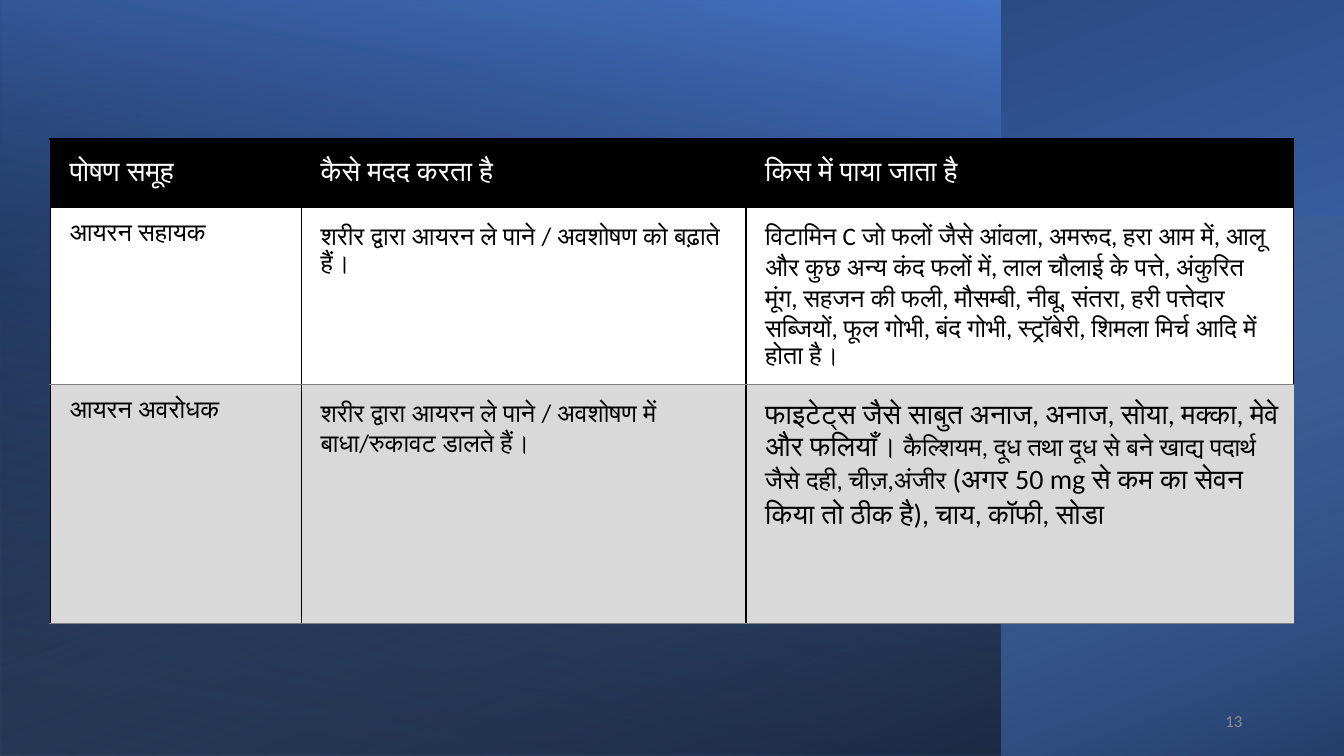
import pptx
import pptx.util
import pptx.dml.color
import pptx.enum.shapes
import pptx.enum.text
import pptx.oxml
import pptx.oxml.ns

Inches, Pt = pptx.util.Inches, pptx.util.Pt
RGB = pptx.dml.color.RGBColor
ANCHOR = pptx.enum.text.MSO_ANCHOR
BLACK = RGB(0, 0, 0)
WHITE = RGB(0xFF, 0xFF, 0xFF)
BLUE = RGB(0x44, 0x72, 0xC4)
NAVY = RGB(0x20, 0x38, 0x64)
SKY = RGB(0x9D, 0xC3, 0xE6)
PALE = RGB(0xD9, 0xD9, 0xD9)
GREY = RGB(0x80, 0x80, 0x80)
MUTED = RGB(0x8C, 0x8C, 0x8C)
WIDE, HIGH = 13.33, 7.5
FONT = "Calibri"

COLS = [2.49, 4.41, 5.43]
ROWS = [0.68, 1.69, 2.37]
FILLS = [BLACK, WHITE, PALE]
# Each cell is a list of (text, size) runs.
CELLS = [
    [[("पोषण समूह", 20)], [("कैसे मदद करता है", 20)], [("किस में पाया जाता है", 20)]],
    [[("आयरन सहायक", 18)],
     [("शरीर द्वारा आयरन ले पाने / अवशोषण को बढ़ाते हैं।", 18)],
     [("विटामिन C जो फलों जैसे आंवला, अमरूद, हरा आम में, आलू और कुछ अन्य कंद "
       "फलों में, लाल चौलाई के पत्ते, अंकुरित मूंग, सहजन की फली, मौसम्बी, नीबू, "
       "संतरा, हरी पत्तेदार सब्जियों, फूल गोभी, बंद गोभी, स्ट्रॉबेरी, शिमला "
       "मिर्च आदि में होता है।", 18)]],
    [[("आयरन अवरोधक", 18)],
     [("शरीर द्वारा आयरन ले पाने / अवशोषण में बाधा/रुकावट डालते हैं।", 18)],
     [("फाइटेट्स जैसे साबुत अनाज, अनाज, सोया, मक्का, मेवे और फलियाँ। ", 20),
      ("कैल्शियम, दूध तथा दूध से बने खाद्य पदार्थ जैसे दही, चीज़,अंजीर ", 18),
      ("(अगर 50 mg से कम का सेवन किया तो ठीक है), चाय, कॉफी, सोडा", 20)]],
]


def node(xml):
    return pptx.oxml.parse_xml(xml.replace(">", f" {pptx.oxml.ns.nsdecls('a')}>", 1))


def write(para, text, size, color):
    run = para.add_run()
    run.text = text
    run.font.size = Pt(size)
    run.font.name = FONT
    run.font.color.rgb = color


def wash(slide, box, turn, angle, stops):
    """Add a mirrored gradient panel; stops are (place, colour, opacity) in percent."""
    panel = slide.shapes.add_shape(
        pptx.enum.shapes.MSO_SHAPE.RECTANGLE, *map(Inches, box))
    panel.shadow.inherit = False
    panel.line.fill.background()
    panel.rotation = turn
    props = panel._element.spPr
    props.xfrm.set("flipH", "1")
    marks = "".join(
        f'<a:gs pos="{place * 1000}"><a:srgbClr val="{color}">'
        f'<a:alpha val="{alpha * 1000}"/></a:srgbClr></a:gs>'
        for place, color, alpha in stops)
    props.prstGeom.addnext(node(
        f'<a:gradFill rotWithShape="1"><a:gsLst>{marks}</a:gsLst>'
        f'<a:lin ang="{angle * 60000}" scaled="0"/></a:gradFill>'))


def backdrop(slide):
    side = (WIDE - HIGH) / 2
    wash(slide, (side, -side, HIGH, WIDE), 270, 200,
         [(8, BLUE, 100), (100, NAVY, 100)])
    wash(slide, (0, 0, 9.92, HIGH), 180, 80,
         [(8, BLACK, 52), (100, BLUE, 100)])
    wash(slide, (3.99, -1.84, 5.35, WIDE), 270, 20,
         [(0, SKY, 0), (100, BLACK, 46)])


def edge(cell, sides):
    """Set the left, right, top and bottom borders; None hides one."""
    props = cell._tc.get_or_add_tcPr()
    for place, (side, line) in enumerate(zip("LRTB", sides)):
        if line:
            color, width = line
            xml = (f'<a:ln{side} w="{Pt(width)}"><a:solidFill>'
                   f'<a:srgbClr val="{color}"/></a:solidFill></a:ln{side}>')
        else:
            xml = f'<a:ln{side} w="0"><a:noFill/></a:ln{side}>'
        props.insert(place, node(xml))


def grid(slide, left, top):
    table = slide.shapes.add_table(
        len(ROWS), len(COLS), Inches(left), Inches(top),
        Inches(sum(COLS)), Inches(sum(ROWS))).table
    table.horz_banding = False
    for col, width in zip(table.columns, COLS):
        col.width = Inches(width)
    for row, height in zip(table.rows, ROWS):
        row.height = Inches(height)
    thick, thin = (BLACK, 1.5), (GREY, 0.5)
    last = len(COLS) - 1
    for r, line in enumerate(CELLS):
        for c, runs in enumerate(line):
            cell = table.cell(r, c)
            cell.fill.solid()
            cell.fill.fore_color.rgb = FILLS[r]
            cell.margin_left = Inches(0.19)
            cell.margin_right = cell.margin_top = cell.margin_bottom = Inches(0.14)
            cell.vertical_anchor = ANCHOR.TOP if r else ANCHOR.MIDDLE
            for text, size in runs:
                write(cell.text_frame.paragraphs[0], text, size,
                      BLACK if r else WHITE)
            right = None if r == 2 and c == last else thick
            above = [thick, None, thin][r]
            below = thin if r else None
            edge(cell, (thick, right, above, below))


def number(slide, box, text):
    frame = slide.shapes.add_textbox(*map(Inches, box)).text_frame
    frame.word_wrap = True
    frame.vertical_anchor = ANCHOR.MIDDLE
    para = frame.paragraphs[0]
    para.alignment = pptx.enum.text.PP_ALIGN.RIGHT
    write(para, text, 12, MUTED)


def main():
    deck = pptx.Presentation()
    deck.slide_width, deck.slide_height = Inches(WIDE), Inches(HIGH)
    slide = deck.slides.add_slide(deck.slide_layouts[6])
    backdrop(slide)
    grid(slide, 0.5, 1.38)
    number(slide, (9.42, 6.95, 3, 0.4), "13")
    deck.save("out.pptx")


if __name__ == "__main__":
    main()
